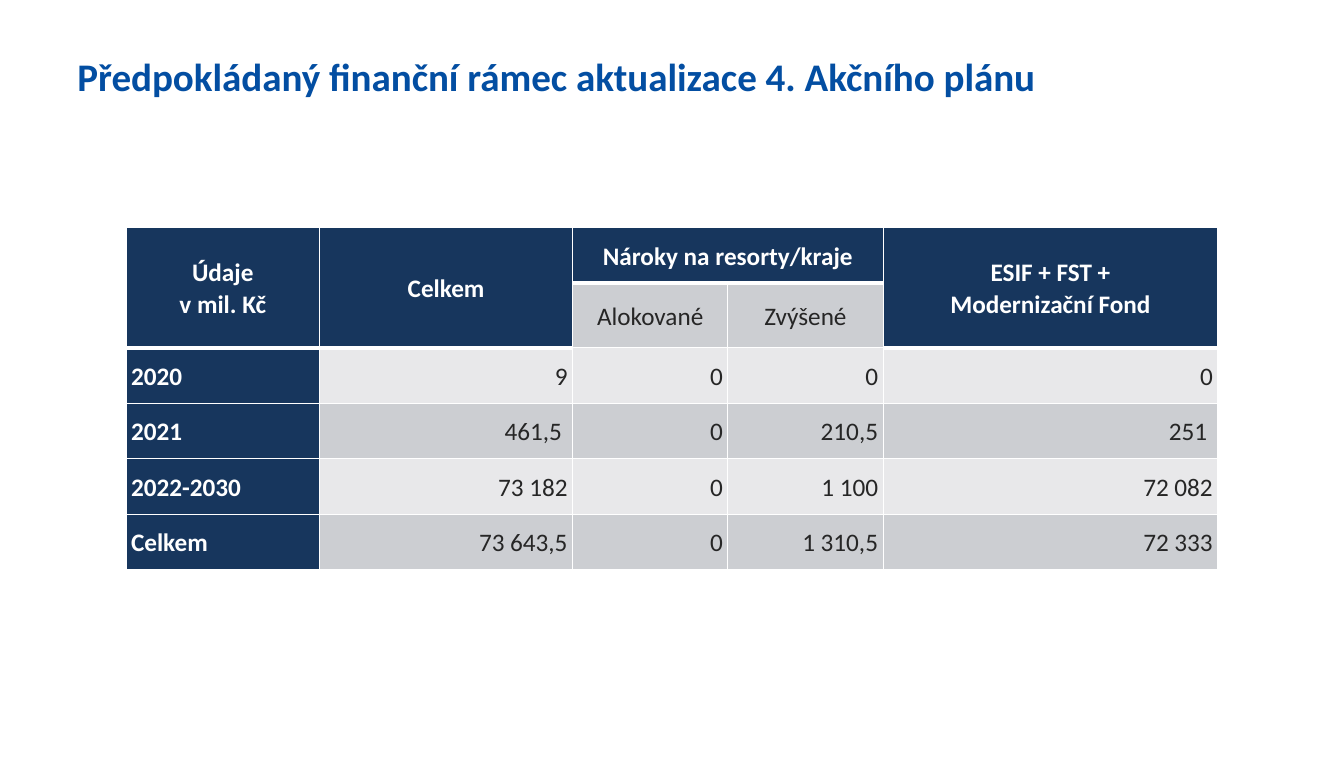
"""Build the slide with the expected financial frame of the 4th Action Plan."""
import pptx
import pptx.dml.color
import pptx.enum.text
import pptx.oxml
import pptx.util
from pptx.util import Inches

NAVY, PALE, GREY = "17365D", "E8E8EA", "CCCED2"
WHITE, DARK, BLUE = "FFFFFF", "262626", "034EA2"
NS = "http://schemas.openxmlformats.org/drawingml/2006/main"
ALIGN = pptx.enum.text.PP_ALIGN
MIDDLE = pptx.enum.text.MSO_ANCHOR.MIDDLE


def color(code):
    return pptx.dml.color.RGBColor.from_string(code)


def style(par, size, code, bold):
    for run in par.runs:
        run.font.name = "Calibri"
        run.font.size = pptx.util.Pt(size)
        run.font.bold = bold
        run.font.color.rgb = color(code)


deck = pptx.Presentation()
deck.slide_width = Inches(13.33)
deck.slide_height = Inches(7.68)
slide = deck.slides.add_slide(deck.slide_layouts[6])

title = slide.shapes.add_textbox(
    Inches(0.67), Inches(0.45), Inches(12), Inches(1.01)).text_frame
title.word_wrap = True
title.margin_top = Inches(0.07)
title.text = "Předpokládaný finanční rámec aktualizace 4. Akčního plánu"
style(title.paragraphs[0], 27.9, BLUE, True)

rows = [
    ["Údaje\nv mil. Kč", "Celkem", "Nároky na resorty/kraje", "",
     "ESIF + FST +\nModernizační Fond"],
    ["", "", "Alokované", "Zvýšené", ""],
    ["2020", "9", "0", "0", "0"],
    ["2021", "461,5 ", "0", "210,5", "251 "],
    ["2022-2030", "73 182", "0", "1 100", "72 082"],
    ["Celkem", "73 643,5", "0", "1 310,5", "72 333"],
]
widths = [1.92, 2.51, 1.54, 1.54, 3.32]
split = (2, 3)

table = slide.shapes.add_table(
    len(rows), len(widths), Inches(1.25), Inches(2.26),
    Inches(10.83), Inches(3.31)).table
for col, width in zip(table.columns, widths):
    col.width = Inches(width)
for row in table.rows:
    row.height = Inches(0.55)

for r, texts in enumerate(rows):
    for c, text in enumerate(texts):
        cell = table.cell(r, c)
        last = 0 if c in split else 1
        head = r <= last
        navy = head or c == 0
        cell.text = text
        cell.vertical_anchor = MIDDLE
        cell.margin_left = cell.margin_right = Inches(0.05)
        cell.margin_top = cell.margin_bottom = 0
        for par in cell.text_frame.paragraphs:
            par.line_spacing = 1.07
            if r < 2:
                par.alignment = ALIGN.CENTER
            else:
                par.alignment = ALIGN.RIGHT if c else ALIGN.LEFT
            style(par, 18, WHITE if navy else DARK, navy)

        thick = {"T": r == last + 1, "B": r == last}
        props = cell._tc.get_or_add_tcPr()
        for side in "LRTB":
            wide = pptx.util.Pt(3 if thick.get(side) else 1)
            props.append(pptx.oxml.parse_xml(
                f'<a:ln{side} xmlns:a="{NS}" w="{wide}"><a:solidFill>'
                f'<a:srgbClr val="{WHITE}"/></a:solidFill></a:ln{side}>'))
        cell.fill.solid()
        band = GREY if r % 2 else PALE
        cell.fill.fore_color.rgb = color(NAVY if navy else band)

for c in (0, 1, 4):
    table.cell(0, c).merge(table.cell(1, c))
table.cell(0, 2).merge(table.cell(0, 3))

deck.save("out.pptx")
